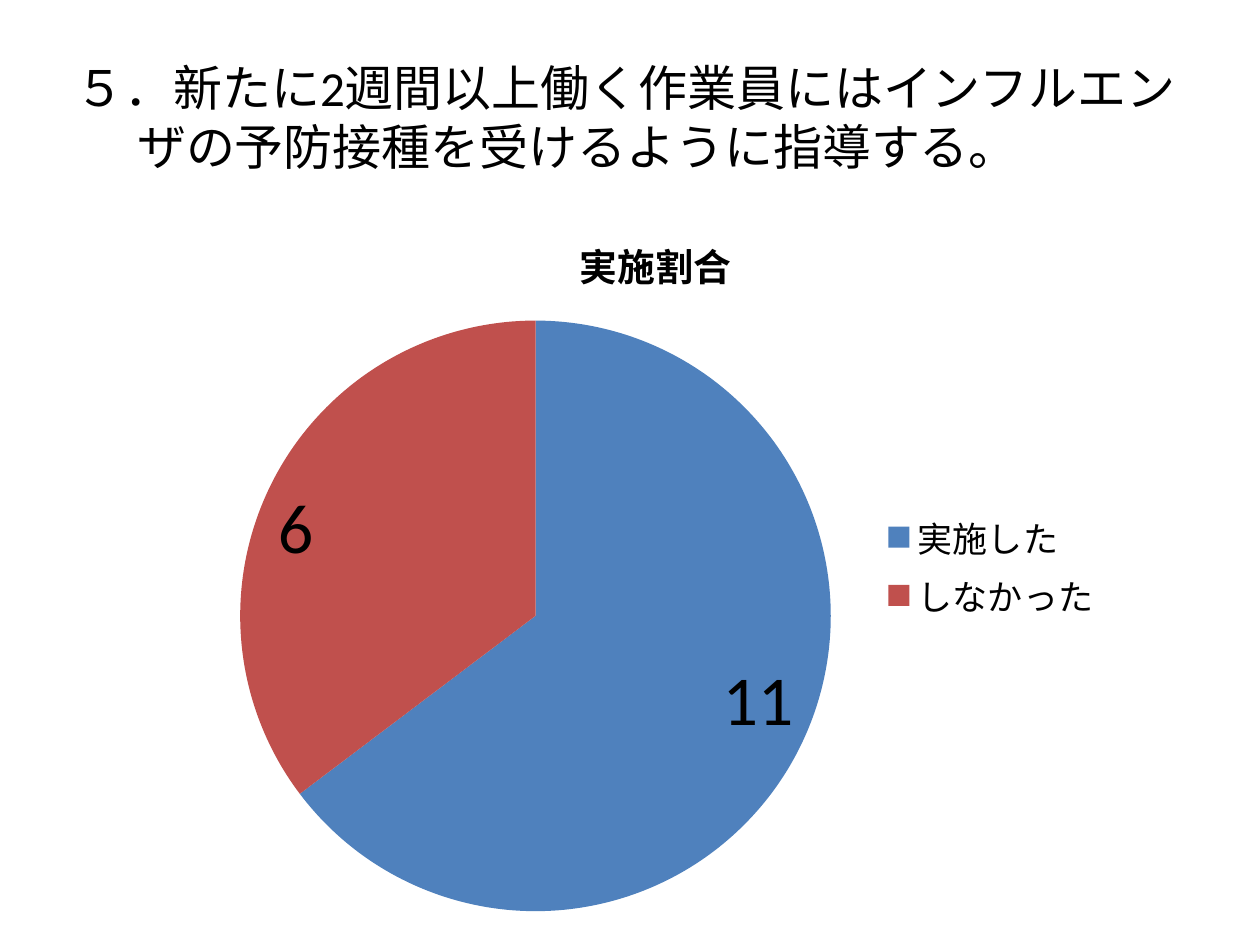
from pptx import Presentation
from pptx.chart.data import CategoryChartData
from pptx.dml.color import RGBColor
from pptx.enum.chart import XL_CHART_TYPE, XL_LABEL_POSITION, XL_LEGEND_POSITION
from pptx.enum.text import MSO_ANCHOR
from pptx.util import Inches, Pt

PIE = XL_CHART_TYPE.PIE
INSIDE_END = XL_LABEL_POSITION.INSIDE_END
RIGHT = XL_LEGEND_POSITION.RIGHT
MIDDLE = MSO_ANCHOR.MIDDLE

COLORS = {"text": "000000", "実施した": "4F81BD", "しなかった": "C0504D"}
ANSWERS = {"実施した": 11, "しなかった": 6}
CHART_TITLE = "実施割合"


def style_font(font, size, bold=False):
    formats = {"name": "Calibri", "size": Pt(size), "bold": bold}
    for attribute, value in formats.items():
        setattr(font, attribute, value)
    font.color.rgb = RGBColor.from_string(COLORS["text"])


prs = Presentation()
prs.slide_width, prs.slide_height = Inches(10), Inches(7.5)
slide = prs.slides.add_slide(prs.slide_layouts[6])

# Numbered question with a hanging indent
question = slide.shapes.add_textbox(Inches(0.5), Inches(0.3), Inches(9), Inches(1.25)).text_frame
question.word_wrap = True
question.vertical_anchor = MIDDLE
paragraph = question.paragraphs[0]
indent = paragraph._p.get_or_add_pPr()
indent.set("marL", str(Inches(0.49)))
indent.set("indent", str(Inches(-0.49)))
run = paragraph.add_run()
run.text = "５．新たに2週間以上働く作業員にはインフルエンザの予防接種を受けるように指導する。"
style_font(run.font, 28)

# Pie of answers
answer_data = CategoryChartData()
answer_data.categories = list(ANSWERS)
answer_data.add_series(CHART_TITLE, list(ANSWERS.values()))
answers = slide.shapes.add_chart(
    PIE, Inches(1.54), Inches(1.62), Inches(7.32), Inches(5.75), answer_data
).chart
style_font(answers.font, 18)

# Chart title
answers.has_title = True
heading = answers.chart_title.text_frame.paragraphs[0].add_run()
heading.text = CHART_TITLE
style_font(heading.font, 21.6, bold=True)
answers.chart_title.include_in_layout = False

# Legend
answers.has_legend = True
answers.legend.position = RIGHT
answers.legend.include_in_layout = False
style_font(answers.legend.font, 20)

# Slices and their values
plot = answers.plots[0]
plot.vary_by_categories = True
for index, answer in enumerate(ANSWERS):
    fill = plot.series[0].points[index].format.fill
    fill.solid()
    fill.fore_color.rgb = RGBColor.from_string(COLORS[answer])
labels = plot.series[0].data_labels
for attribute, value in {"show_value": True, "position": INSIDE_END}.items():
    setattr(labels, attribute, value)
style_font(labels.font, 40)

prs.save("out.pptx")
